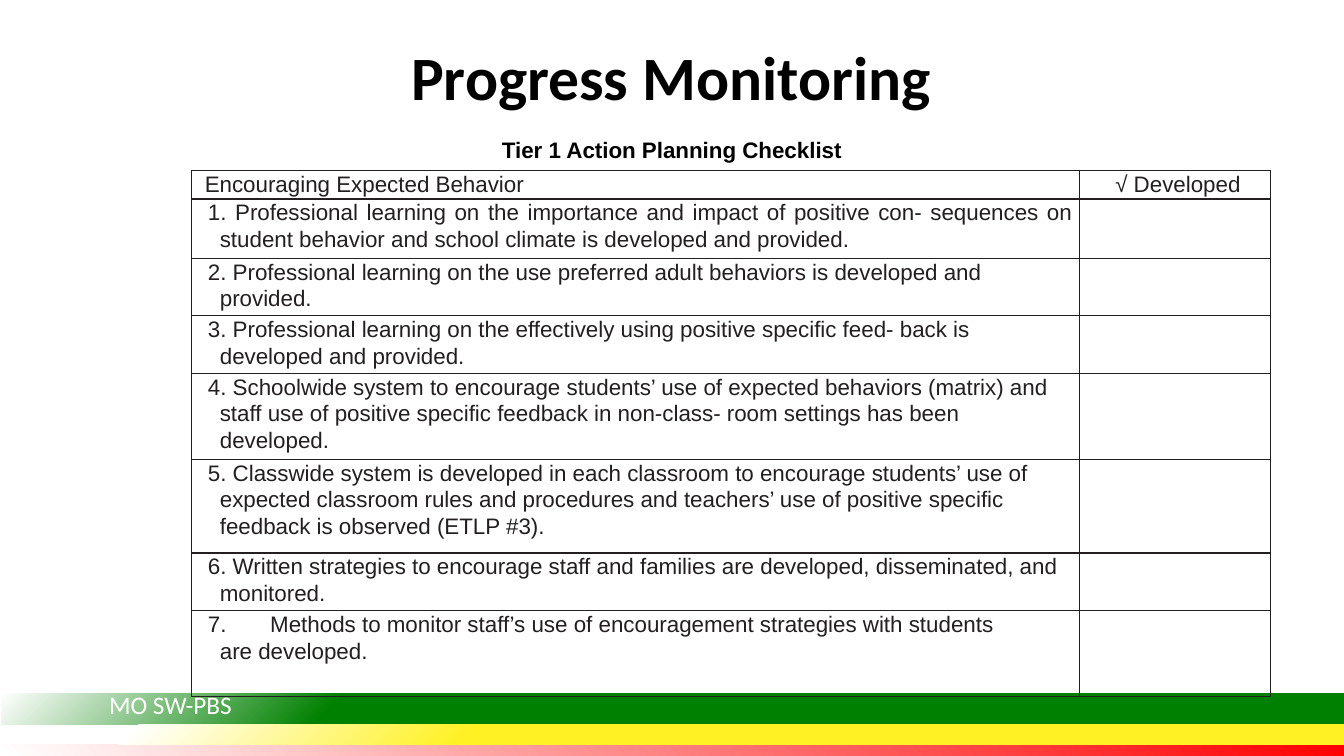
from dataclasses import dataclass

from lxml import etree
from pptx import Presentation
from pptx.dml.color import RGBColor
from pptx.enum.shapes import MSO_SHAPE
from pptx.enum.text import MSO_ANCHOR, PP_ALIGN
from pptx.oxml.ns import qn
from pptx.util import Cm, Pt

RECTANGLE = MSO_SHAPE.RECTANGLE
MIDDLE, TOP = MSO_ANCHOR.MIDDLE, MSO_ANCHOR.TOP
LEFT, CENTER, JUSTIFY = PP_ALIGN.LEFT, PP_ALIGN.CENTER, PP_ALIGN.JUSTIFY


@dataclass(frozen=True)
class Theme:
    heading_font: str = "Calibri"
    body_font: str = "Arial"
    title_size: int = 44
    footer_size: int = 18
    body_size: int = 16
    black: str = "000000"
    white: str = "FFFFFF"
    ink: str = "231F20"
    green: str = "008000"
    yellow: str = "FFF123"
    red: str = "FF0000"


THEME = Theme()
SLIDE_WIDTH, SLIDE_HEIGHT = 33.87, 19.05

HEADERS = ("Encouraging Expected Behavior", "√ Developed")
CHECKLIST = (
    "1. Professional learning on the importance and impact of positive con- sequences on "
    "student behavior and school climate is developed and provided.",
    "2. Professional learning on the use preferred adult behaviors is developed and provided.",
    "3. Professional learning on the effectively using positive specific feed- back is "
    "developed and provided.",
    "4. Schoolwide system to encourage students’ use of expected behaviors (matrix) and "
    "staff use of positive specific feedback in non-class- room settings has been developed.",
    "5. Classwide system is developed in each classroom to encourage students’ use of "
    "expected classroom rules and procedures and teachers’ use of positive specific "
    "feedback is observed (ETLP #3).",
    "6. Written strategies to encourage staff and families are developed, disseminated, "
    "and monitored.",
    "7.\tMethods to monitor staff’s use of encouragement strategies with students are "
    "developed.",
)
COLUMN_WIDTHS = (22.38, 4.8)
ROW_HEIGHTS = (0.66, 1.49, 1.34, 1.45, 2.01, 2.36, 1.36, 2.16)


def style_font(font, family, size, color, bold=False):
    font.name, font.size, font.bold = family, Pt(size), bold
    font.color.rgb = RGBColor.from_string(color)


def add_label(slide, box, text, family, size, color, bold=False, align=CENTER, anchor=TOP):
    frame = slide.shapes.add_textbox(*map(Cm, box)).text_frame
    frame.word_wrap = True
    frame.vertical_anchor = anchor
    line = frame.paragraphs[0]
    line.text = text
    line.alignment = align
    style_font(line.runs[0].font, family, size, color, bold)
    return line


def add_radial_band(slide, box, stops, focus):
    """Add a band whose colour spreads in circles from the given corner."""
    band = slide.shapes.add_shape(RECTANGLE, *map(Cm, box))
    band.shadow.inherit = False
    band.line.fill.background()
    gradient = etree.Element(qn("a:gradFill"), rotWithShape="1")
    stop_list = etree.SubElement(gradient, qn("a:gsLst"))
    for percent, color in stops:
        stop = etree.SubElement(stop_list, qn("a:gs"), pos=str(percent * 1000))
        etree.SubElement(stop, qn("a:srgbClr"), val=color)
    circle = etree.SubElement(gradient, qn("a:path"), path="circle")
    etree.SubElement(circle, qn("a:fillToRect"),
                     {side: "100000" for side in focus})
    band.element.spPr.find(qn("a:prstGeom")).addnext(gradient)


def add_text_shadow(run):
    effects = etree.Element(qn("a:effectLst"))
    shadow = etree.SubElement(effects, qn("a:outerShdw"), blurRad="38100",
                              dist="38100", dir="2700000", algn="tl")
    etree.SubElement(shadow, qn("a:srgbClr"), val=THEME.black)
    run.font.fill._xPr.find(qn("a:solidFill")).addnext(effects)


def add_footer(slide, left, top, width):
    white = THEME.white
    bands = (
        (1.29, 0.31, ((0, THEME.red), (100, white)), "lb"),
        (0, 0.79, ((0, THEME.green), (75, THEME.green), (100, white)), "lt"),
        (0.79, 0.5, ((0, THEME.yellow), (65, THEME.yellow), (90, white), (100, white)), "lt"),
    )
    for offset, height, stops, focus in bands:
        add_radial_band(slide, (left, top + offset, width, height), stops, focus)
    program = add_label(slide, (left + 2.45, top - 0.22, 6.48, 1.02), "MO SW-PBS",
                        THEME.heading_font, THEME.footer_size, white, align=LEFT)
    add_text_shadow(program.runs[0])


def add_heading(slide, left, top, width):
    title = add_label(slide, (left, top, width, 3.68), "Progress Monitoring",
                      THEME.heading_font, THEME.title_size, THEME.black, True, anchor=MIDDLE)
    title.line_spacing = 0.9
    add_label(slide, (left + 5.49, top + 3.12, 10.95, 0.94), "Tier 1 Action Planning Checklist",
              THEME.body_font, THEME.body_size, THEME.black, True)


def outline_cell(cell):
    properties = cell._tc.get_or_add_tcPr()
    for position, side in enumerate(("lnL", "lnR", "lnT", "lnB")):
        border = etree.Element(qn(f"a:{side}"), w=str(Pt(1)))
        fill = etree.SubElement(border, qn("a:solidFill"))
        etree.SubElement(fill, qn("a:srgbClr"), val=THEME.ink)
        properties.insert(position, border)


def fill_cell(cell, text, align, indent, hanging, space_before):
    cell.fill.background()
    outline_cell(cell)
    cell.margin_left = cell.margin_right = Cm(0.18)
    cell.margin_top = cell.margin_bottom = 0
    line = cell.text_frame.paragraphs[0]
    line.text = text
    line.alignment = align
    line.line_spacing = 1.07
    line.space_before, line.space_after = Pt(space_before), Pt(8)
    properties = line._p.get_or_add_pPr()
    properties.set("marL", str(Cm(indent)))
    properties.set("indent", str(-Cm(hanging)))
    style_font(line.font, THEME.body_font, THEME.body_size, THEME.ink)
    for run in line.runs:
        style_font(run.font, THEME.body_font, THEME.body_size, THEME.ink)


def add_checklist(slide, left, top):
    checklist = slide.shapes.add_table(
        len(ROW_HEIGHTS), len(COLUMN_WIDTHS), Cm(left), Cm(top),
        Cm(sum(COLUMN_WIDTHS)), Cm(sum(ROW_HEIGHTS))).table
    checklist.first_row = checklist.horz_banding = False
    for column, width in zip(checklist.columns, COLUMN_WIDTHS):
        column.width = Cm(width)
    for row, height in zip(checklist.rows, ROW_HEIGHTS):
        row.height = Cm(height)
    for column, (header, align) in enumerate(zip(HEADERS, (LEFT, CENTER))):
        fill_cell(checklist.cell(0, column), header, align, 0.15, 0, 0.2)
    for row, item in enumerate(CHECKLIST, start=1):
        align = JUSTIFY if row == 1 else LEFT
        fill_cell(checklist.cell(row, 0), item, align, 0.53, 0.3, 1.8)
        fill_cell(checklist.cell(row, 1), "", LEFT, 0, 0, 0)
    checklist.cell(len(CHECKLIST), 0).margin_right = Cm(2)


def main():
    deck = Presentation()
    deck.slide_width, deck.slide_height = Cm(SLIDE_WIDTH), Cm(SLIDE_HEIGHT)
    slide = deck.slides.add_slide(deck.slide_layouts[6])
    add_footer(slide, 0.05, 17.47, SLIDE_WIDTH)
    add_heading(slide, 5.97, 0.18, 21.89)
    add_checklist(slide, 4.83, 4.29)
    deck.save("out.pptx")


if __name__ == "__main__":
    main()
